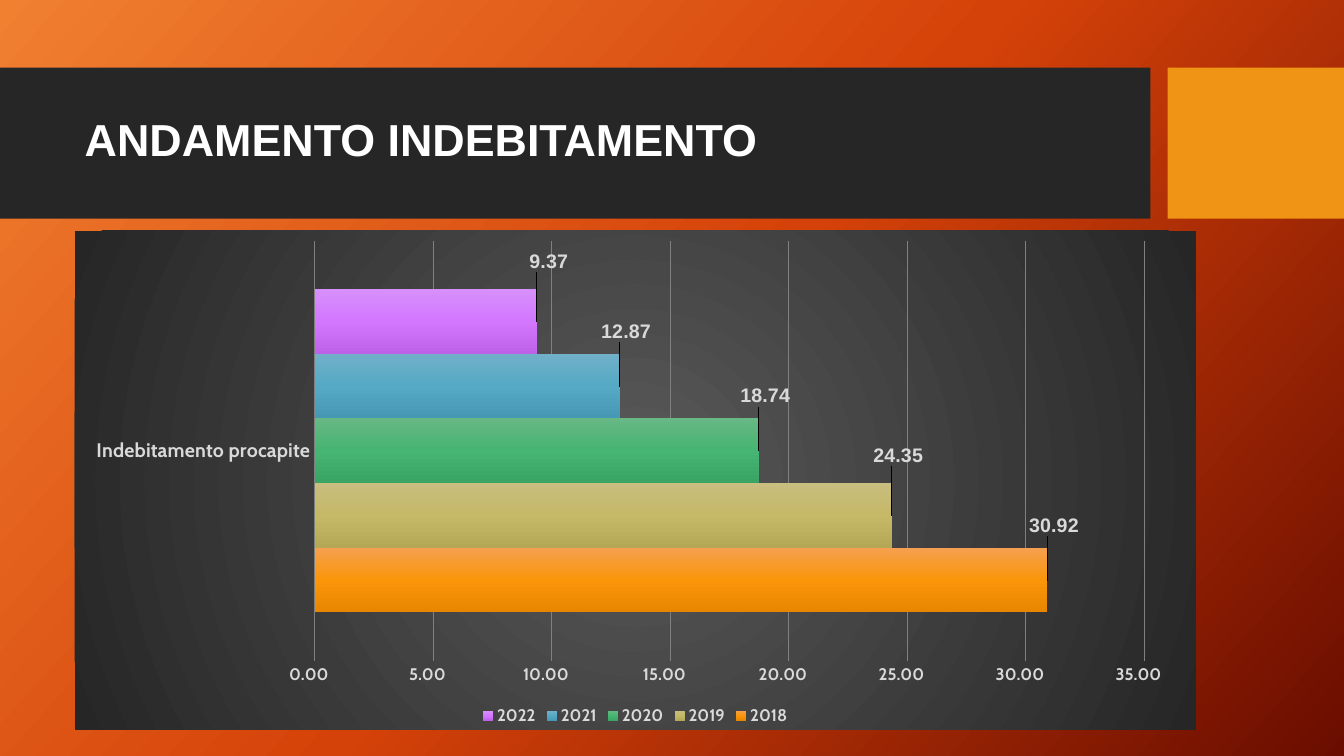
from dataclasses import dataclass

from lxml import etree
from pptx import Presentation
from pptx.chart.data import CategoryChartData
from pptx.dml.color import RGBColor
from pptx.enum.chart import (XL_CHART_TYPE, XL_LABEL_POSITION,
                             XL_LEGEND_POSITION, XL_TICK_MARK)
from pptx.enum.shapes import MSO_SHAPE
from pptx.enum.text import MSO_ANCHOR, PP_ALIGN
from pptx.oxml import parse_xml
from pptx.oxml.ns import nsdecls, qn
from pptx.util import Inches, Pt

RECT = MSO_SHAPE.RECTANGLE
BAR = XL_CHART_TYPE.BAR_CLUSTERED
BOTTOM = XL_LEGEND_POSITION.BOTTOM
OUTSIDE = XL_LABEL_POSITION.OUTSIDE_END
NO_TICK = XL_TICK_MARK.NONE
MIDDLE = MSO_ANCHOR.MIDDLE
LEFT = PP_ALIGN.LEFT


@dataclass(frozen=True)
class Theme:
    background: tuple = ("F18031", "D54209", "6A0D00")
    panel: tuple = ("595959", "262626")
    band: str = "262626"
    accent: str = "F09415"
    white: str = "FFFFFF"
    label: str = "D9D9D9"
    grid: str = "808080"
    head_font: str = "Arial"
    body_font: str = "Cabin"
    title_size: int = 32
    label_size: int = 14
    axis_size: int = 12
    base_size: int = 10


T = Theme()
NUMBER_FORMAT = r"#,##0.00\ _€"
# Year, value, bar gradient, label offset as a share of the chart
DEBT = [
    ("2018", 30.92, ("F4A050", "FB960A", "E88600"), (-0.02, -0.11)),
    ("2019", 24.35, ("C8BE7F", "C5B867", "B4A756"), (-0.02, -0.12)),
    ("2020", 18.74, ("67B884", "46B472", "3AA464"), (-0.02, -0.11)),
    ("2021", 12.87, ("71B0C8", "55A9C5", "4798B4"), (-0.02, -0.11)),
    ("2022", 9.37, ("D790FB", "D377FF", "BE62EA"), (-0.01, -0.12)),
]


def gradient(colors, angle=None):
    """Evenly spaced gradient fill; radial when no angle is given."""
    last = len(colors) - 1
    stops = "".join(
        f'<a:gs pos="{100000 * i // last}"><a:srgbClr val="{c}"/></a:gs>'
        for i, c in enumerate(colors))
    if angle is None:
        shade = ('<a:path path="circle"><a:fillToRect l="50000" t="50000" '
                 'r="50000" b="50000"/></a:path>')
    else:
        shade = f'<a:lin ang="{angle * 60000}" scaled="0"/>'
    return parse_xml(f'<a:gradFill {nsdecls("a")} rotWithShape="1">'
                     f'<a:gsLst>{stops}</a:gsLst>{shade}</a:gradFill>')


def fill_gradient(fill, owner, colors, angle):
    fill.solid()
    solid = next(owner.iter(qn("a:solidFill")))
    solid.getparent().replace(solid, gradient(colors, angle))


def manual_layout(x, y, w=None, h=None):
    layout = etree.Element(qn("c:layout"))
    manual = etree.SubElement(layout, qn("c:manualLayout"))
    parts = {"x": x, "y": y}
    if w is not None:
        parts = {"layoutTarget": "inner", "xMode": "edge", "yMode": "edge",
                 **parts, "w": w, "h": h}
    for name, value in parts.items():
        etree.SubElement(manual, qn(f"c:{name}")).set("val", str(value))
    return layout


def set_font(font, size, name=T.body_font, color=T.label, bold=True):
    font.size, font.name, font.bold = Pt(size), name, bold
    font.color.rgb = RGBColor.from_string(color)


def add_block(s, x, w, color):
    sp = s.shapes.add_shape(RECT, Inches(x), Inches(0.67), Inches(w), Inches(1.5))
    sp.shadow.inherit = False
    sp.fill.solid()
    sp.fill.fore_color.rgb = RGBColor.from_string(color)
    sp.line.fill.background()


def add_title(s, text):
    sp = s.shapes.title
    sp.left, sp.top, sp.width, sp.height = map(Inches, (0.74, 0.82, 10.51, 1.18))
    tf = sp.text_frame
    tf.word_wrap, tf.vertical_anchor = True, MIDDLE
    p = tf.paragraphs[0]
    p.alignment, p.line_spacing = LEFT, 0.9
    r = p.add_run()
    r.text = text
    set_font(r.font, T.title_size, T.head_font, T.white)
    s.shapes._spTree.append(sp._element)  # bring in front of the band


def style_axis(axis, size):
    axis.major_tick_mark = axis.minor_tick_mark = NO_TICK
    axis.format.line.fill.background()
    set_font(axis.tick_labels.font, size)


def style_series(series, colors, offset):
    fill_gradient(series.format.fill, series._element, colors, 90)
    labels = series.data_labels
    labels.show_value = True
    labels.number_format, labels.number_format_is_linked = NUMBER_FORMAT, False
    labels.position = OUTSIDE
    label = series.points[0].data_label
    label.position = OUTSIDE
    for item in (labels, label):
        set_font(item.font, T.label_size, T.head_font)
    idx = next(series._element.iter(qn("c:dLbl"))).find(qn("c:idx"))
    idx.addnext(manual_layout(*offset))


def add_debt_chart(s):
    data = CategoryChartData(number_format=NUMBER_FORMAT)
    data.categories = ["Indebitamento procapite"]
    for year, value, _, _ in DEBT:
        data.add_series(year, [value])
    chart = s.shapes.add_chart(BAR, Inches(0.74), Inches(2.29), Inches(11.12),
                               Inches(4.95), data).chart
    set_font(chart.font, T.base_size, color=T.white, bold=False)
    chart.has_title = False

    # Panel and plot area
    panel = parse_xml(f'<c:spPr {nsdecls("c", "a")}><a:ln><a:noFill/></a:ln></c:spPr>')
    panel.insert(0, gradient(T.panel))
    chart_el = chart._chartSpace.find(qn("c:chart"))
    chart_el.addnext(panel)
    plot_area = chart_el.find(qn("c:plotArea"))
    for old in plot_area.findall(qn("c:layout")):
        plot_area.remove(old)
    plot_area.insert(0, manual_layout(0.214, 0.02, 0.74, 0.842))

    # Axes and legend
    style_axis(chart.category_axis, T.label_size)
    axis = chart.value_axis
    style_axis(axis, T.axis_size)
    axis.minimum_scale, axis.maximum_scale, axis.major_unit = 0, 35, 5
    axis.tick_labels.number_format = NUMBER_FORMAT
    axis.tick_labels.number_format_is_linked = False
    line = axis.major_gridlines.format.line
    line.width = Pt(0.75)
    line.color.rgb = RGBColor.from_string(T.grid)
    chart.has_legend = True
    chart.legend.position, chart.legend.include_in_layout = BOTTOM, False
    set_font(chart.legend.font, T.axis_size)

    # Bars
    plot = chart.plots[0]
    plot.gap_width, plot.overlap, plot.vary_by_categories = 150, 0, False
    for series, (_, _, colors, offset) in zip(plot.series, DEBT):
        style_series(series, colors, offset)


def main():
    prs = Presentation()
    prs.slide_width, prs.slide_height = Inches(13.33), Inches(7.5)
    s = prs.slides.add_slide(prs.slide_layouts[5])
    fill_gradient(s.background.fill, s._element, T.background, 42)
    add_block(s, 0, 11.41, T.band)
    add_block(s, 11.58, 1.75, T.accent)
    add_title(s, "ANDAMENTO INDEBITAMENTO")
    add_debt_chart(s)
    prs.save("out.pptx")


if __name__ == "__main__":
    main()
